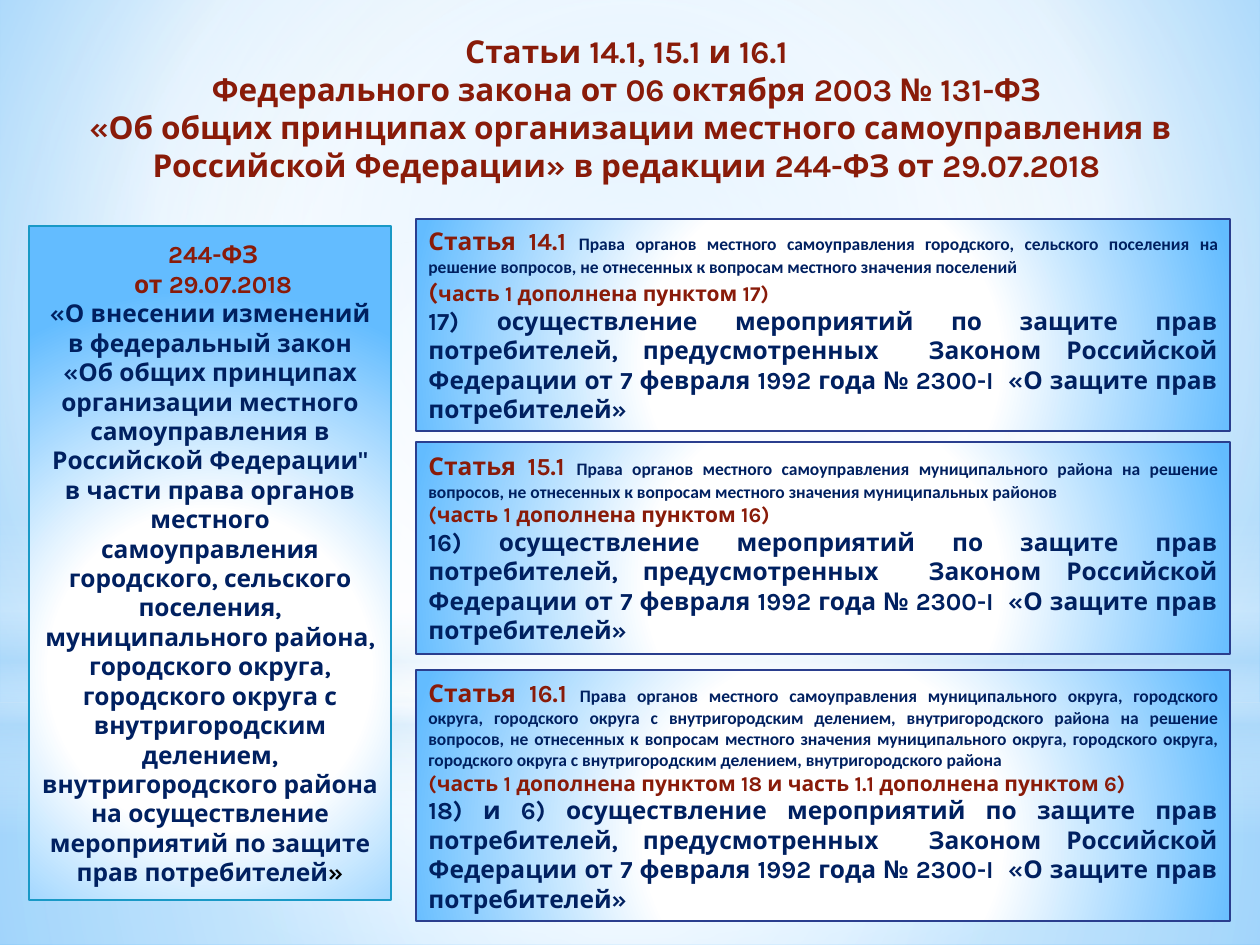
from lxml.etree import SubElement
from pptx import Presentation
from pptx.dml.color import RGBColor
from pptx.enum.shapes import MSO_SHAPE
from pptx.enum.text import MSO_ANCHOR, MSO_AUTO_SIZE, PP_ALIGN
from pptx.oxml.ns import qn
from pptx.util import Inches, Pt

PX = 7257
RED, NAVY, BLACK = "891B09", "002060", "000000"
hue = RGBColor.from_string


def shade(props, stops, focus):
    old = props.find(qn("a:solidFill"))
    grad = SubElement(props, qn("a:gradFill"), rotWithShape="1")
    props.replace(old, grad)
    items = SubElement(grad, qn("a:gsLst"))
    for pos, tone, alpha in stops:
        stop = SubElement(items, qn("a:gs"), pos=str(pos * 1000))
        color = SubElement(stop, qn("a:srgbClr"), val=tone)
        if alpha < 100:
            SubElement(color, qn("a:alpha"), val=str(alpha * 1000))
    if focus:
        round_path = SubElement(grad, qn("a:path"), path="circle")
        SubElement(round_path, qn("a:fillToRect"),
                   {side: str(n * 1000) for side, n in zip("ltrb", focus)})
    else:
        SubElement(grad, qn("a:lin"), ang="5400000", scaled="0")


def write(frame, paras, align, anchor):
    frame.word_wrap = True
    frame.auto_size = MSO_AUTO_SIZE.NONE
    frame.vertical_anchor = anchor
    frame.margin_left = frame.margin_right = Inches(0.1)
    frame.margin_top = frame.margin_bottom = Inches(0.05)
    for i, runs in enumerate(paras):
        para = frame.add_paragraph() if i else frame.paragraphs[0]
        para.alignment = align
        for text, size, tone, face in runs:
            run = para.add_run()
            run.text = text
            run.font.size = Pt(size)
            run.font.bold = True
            run.font.name = face
            run.font.color.rgb = hue(tone)


deck = Presentation()
deck.slide_width, deck.slide_height = Inches(10), Inches(7.5)
slide = deck.slides.add_slide(deck.slide_layouts[5])
shapes = slide.shapes

slide.background.fill.solid()
shade(slide.element.find(".//" + qn("p:bgPr")),
      [(0, "9ED5FF", 100), (60, "FFFFFF", 100), (100, "5BB9FF", 100)],
      (20, 10, 20, 60))

RECT, OVAL = MSO_SHAPE.RECTANGLE, MSO_SHAPE.OVAL
MID = (50, 50, 50, 50)
layers = [
    (RECT, 703, 242, MID,
     [(0, "FFFFFF", 91), (37, "FFFFFF", 76), (100, "B4DCFA", 79)]),
    (RECT, 0, 703, MID,
     [(0, "FFFFFF", 89), (48, "FFFFFF", 62), (100, "B4DCFA", 79)]),
    (RECT, 519, 315, None,
     [(0, "FFFFFF", 0), (29, "FFFFFF", 30), (45, "B4DCFA", 40),
      (55, "FFFFFF", 26), (65, "B4DCFA", 60), (100, "FFFFFF", 0)]),
    (OVAL, 221, 703, MID, [(0, "FFFFFF", 100), (56, "FFFFFF", 0)]),
]
for kind, top, high, focus, stops in layers:
    layer = shapes.add_shape(kind, 0, top * PX, 1260 * PX, high * PX)
    layer.shadow.inherit = False
    layer.line.fill.background()
    layer.fill.solid()
    shade(layer.element.spPr, stops, focus)

title = shapes.title
shapes.element.append(title.element)
title.left, title.top, title.width, title.height = (
    n * PX for n in (30, 26, 1201, 165))
heads = [
    "Статьи 14.1, 15.1 и 16.1 ",
    "Федерального закона от 06 октября 2003 № 131-ФЗ ",
    "«Об общих принципах организации местного самоуправления в "
    "Российской Федерации» в редакции 244-ФЗ от 29.07.2018 ",
]
write(title.text_frame, [[(text, 18, RED, "Karla")] for text in heads],
      PP_ALIGN.CENTER, MSO_ANCHOR.TOP)

change = (
    "«О внесении изменений в федеральный закон «Об общих принципах "
    "организации местного самоуправления в Российской Федерации\" "
    "в части права органов местного самоуправления городского, сельского "
    "поселения, муниципального района, городского округа, городского округа "
    "с внутригородским делением, внутригородского района на осуществление "
    "мероприятий по защите прав потребителей")
panels = [(29, 226, 362, 674, "1999C6", PP_ALIGN.CENTER, [
    [(" 244-ФЗ", 14, RED, "Karla")],
    [(" от 29.07.2018", 14, RED, "Karla")],
    [(change, 14, NAVY, "Karla"), ("»", 14, BLACK, "Karla")],
])]

duty = (
    " осуществление мероприятий по защите прав потребителей, "
    "предусмотренных  Законом Российской Федерации от 7 февраля 1992 года "
    "№ 2300-I  «О защите прав потребителей» ")
rights = "Права органов местного самоуправления "
solve = " на решение вопросов, не отнесенных к вопросам местного значения "
cities = ("городского округа, городского округа с внутригородским делением, "
          "внутригородского района")
rules = [
    (219, 212, "14.1", "городского, сельского поселения", "поселений",
     [("(", 14, RED, "Karla"),
      ("часть 1 дополнена пунктом 17)", 12, RED, "Karla")], "17)"),
    (442, 212, "15.1", "муниципального района", "муниципальных районов",
     [("(часть 1 дополнена пунктом 16)", 12, RED, "Karla")], "16)"),
    (670, 251, "16.1", "муниципального округа, " + cities,
     "муниципального округа, " + cities,
     [("(часть 1 дополнена пунктом 18 и часть 1.1 дополнена пунктом 6)",
       12, RED, "Karla")], "18) и 6)"),
]
for top, high, num, whose, scope, note, point in rules:
    panels.append((416, top, 814, high, "2A3E8E", PP_ALIGN.JUSTIFY, [
        [(f"Статья {num} ", 14, RED, "Karla"),
         (rights + whose + solve + scope, 10, NAVY, "Calibri")],
        note,
        [(point + duty, 14, NAVY, "Karla")],
    ]))

for left, top, wide, high, edge, align, paras in panels:
    panel = shapes.add_shape(RECT, left * PX, top * PX, wide * PX, high * PX)
    panel.shadow.inherit = False
    panel.line.color.rgb = hue(edge)
    panel.line.width = Pt(1.25)
    panel.fill.solid()
    shade(panel.element.spPr,
          [(0, "FFFFFF", 100), (42, "FFFFFF", 100), (100, "63BCFF", 100)],
          (24, 44, 24, 12))
    write(panel.text_frame, paras, align, MSO_ANCHOR.MIDDLE)

deck.save("out.pptx")
